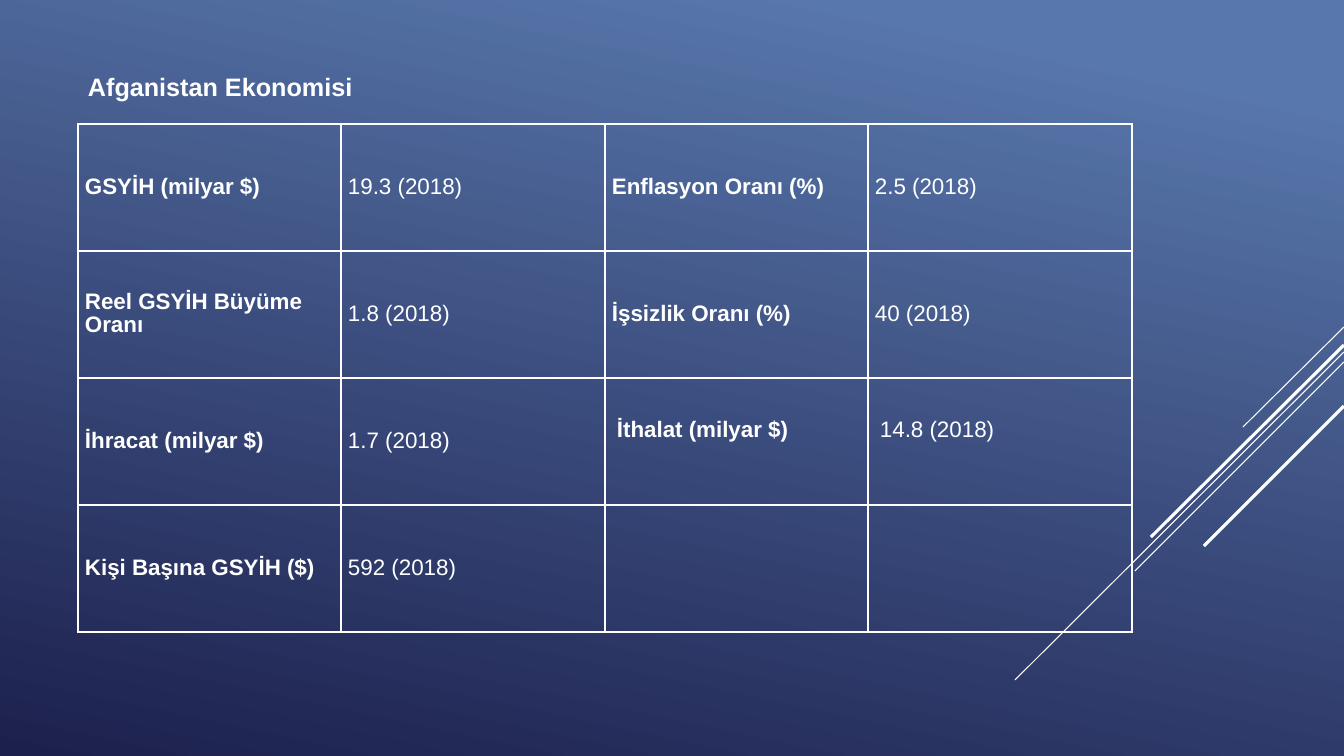
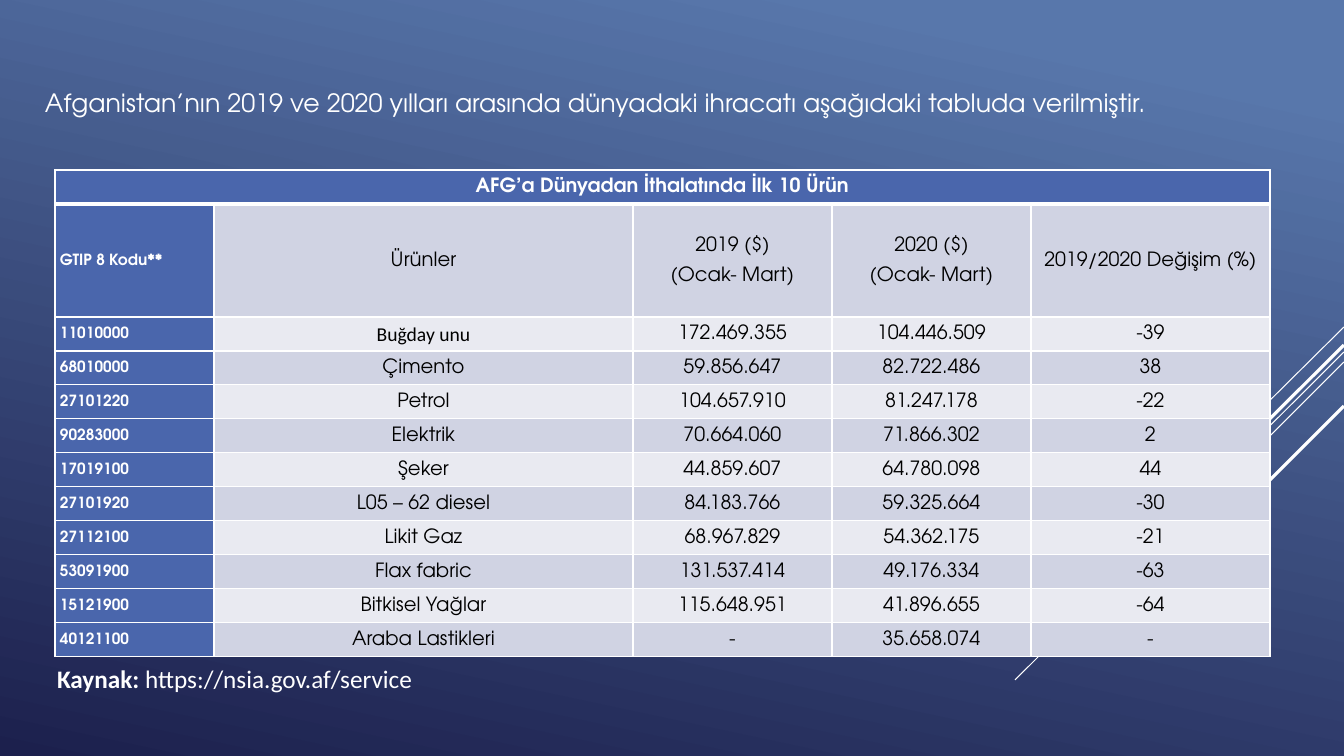
from dataclasses import dataclass

from lxml import etree
from pptx import Presentation
from pptx.dml.color import RGBColor
from pptx.enum.shapes import MSO_CONNECTOR
from pptx.enum.text import MSO_ANCHOR, MSO_AUTO_SIZE, PP_ALIGN
from pptx.oxml.ns import qn
from pptx.slide import Slide
from pptx.table import Table, _Cell
from pptx.text.text import TextFrame, _Paragraph
from pptx.util import Emu, Length, Pt

STRAIGHT = MSO_CONNECTOR.STRAIGHT
MIDDLE = MSO_ANCHOR.MIDDLE
GROW = MSO_AUTO_SIZE.SHAPE_TO_FIT_TEXT
LEFT, CENTER = PP_ALIGN.LEFT, PP_ALIGN.CENTER

EMU_PER_PX = 914400 / 100.8
PAGE_WIDTH, PAGE_HEIGHT = 1344, 756
COLORS = {
    "sky": "5877AB",
    "night": "1C204D",
    "white": "FFFFFF",
    "black": "000000",
    "header": "4A66AC",
    "band_dark": "D0D3E3",
    "band_light": "E9EAF1",
}
SANS, HUMANIST, GEOMETRIC = "Arial", "Calibri", "TeX Gyre Adventor"
EXACT_LINE = Pt(16.5)
TABLE_LINE = 1.07
BORDER_SIDES = ("L", "R", "T", "B")


@dataclass(frozen=True)
class Ray:
    top: int
    end_x: int
    end_y: int
    weight: float


@dataclass(frozen=True)
class Indicator:
    label: str
    value: str
    left_inset: int = 7
    bottom_inset: int = 0
    spacing: Length | float = EXACT_LINE


@dataclass(frozen=True)
class Product:
    code: str
    name: str
    first_year: str
    second_year: str
    change: str
    name_font: str = GEOMETRIC


RAYS = (
    Ray(327, 1243, 427, 0.75),
    Ray(352, 1015, 680, 0.75),
    Ray(362, 1135, 571, 0.75),
    Ray(345, 1151, 537, 2.25),
    Ray(406, 1204, 546, 2.25),
)
INDICATORS = (
    (Indicator("GSYİH (milyar $)", "19.3 (2018)"), Indicator("Enflasyon Oranı (%)", "2.5 (2018)")),
    (Indicator("Reel GSYİH Büyüme Oranı", "1.8 (2018)"), Indicator("İşsizlik Oranı (%)", "40 (2018)")),
    (
        Indicator("İhracat (milyar $)", "1.7 (2018)"),
        Indicator("İthalat (milyar $)", "14.8 (2018)", 12, 26, TABLE_LINE),
    ),
    (Indicator("Kişi Başına GSYİH ($)", "592 (2018)"), Indicator("", "")),
)
PRODUCT_HEADINGS = (
    ("Ürünler",),
    ("2019 ($)", "(Ocak- Mart)"),
    ("2020 ($)", "(Ocak- Mart)"),
    ("2019/2020 Değişim (%)",),
)
PRODUCTS = (
    Product("11010000", "Buğday unu", "172.469.355", "104.446.509", "-39", HUMANIST),
    Product("68010000", "Çimento", "59.856.647", "82.722.486", "38"),
    Product("27101220", "Petrol", "104.657.910", "81.247.178", "-22"),
    Product("90283000", "Elektrik", "70.664.060", "71.866.302", "2"),
    Product("17019100", "Şeker", "44.859.607", "64.780.098", "44"),
    Product("27101920", "L05 – 62 diesel", "84.183.766", "59.325.664", "-30"),
    Product("27112100", "Likit Gaz", "68.967.829", "54.362.175", "-21"),
    Product("53091900", "Flax fabric", "131.537.414", "49.176.334", "-63"),
    Product("15121900", "Bitkisel Yağlar", "115.648.951", "41.896.655", "-64"),
    Product("40121100", "Araba Lastikleri", "-", "35.658.074", "-"),
)


def px(length: int) -> Emu:
    return Emu(round(length * EMU_PER_PX))


def rgb(name: str) -> RGBColor:
    return RGBColor.from_string(COLORS[name])


def write(
    para: _Paragraph,
    text: str,
    *,
    size: int = 18,
    font: str = SANS,
    color: str = "white",
    bold: bool = False,
    align: PP_ALIGN = LEFT,
    spacing: Length | float = 1.0,
    after: float = 0,
) -> None:
    para.alignment = align
    para.line_spacing = spacing
    para.space_before = Pt(0)
    para.space_after = Pt(after)
    span = para.add_run()
    span.text = text
    span.font.size = Pt(size)
    span.font.name = font
    span.font.bold = bold
    span.font.color.rgb = rgb(color)


def add_text_box(
    page: Slide, left: int, top: int, width: int, height: int, left_inset: int = 10
) -> TextFrame:
    box = page.shapes.add_textbox(px(left), px(top), px(width), px(height))
    frame = box.text_frame
    frame.word_wrap = True
    frame.auto_size = GROW
    frame.margin_left = px(left_inset)
    return frame


def set_borders(cell: _Cell, top: int = 1, bottom: int = 1) -> None:
    properties = cell._tc.get_or_add_tcPr()
    for side, weight in zip(BORDER_SIDES, (1, 1, top, bottom)):
        line = etree.SubElement(properties, qn(f"a:ln{side}"), w=str(Pt(weight)))
        fill = etree.SubElement(line, qn("a:solidFill"))
        etree.SubElement(fill, qn("a:srgbClr"), val=COLORS["white"])


def style_cell(
    cell: _Cell, inset: int, fill: str | None = None, top: int = 1, bottom: int = 1
) -> None:
    set_borders(cell, top, bottom)
    if fill is None:
        cell.fill.background()
    else:
        cell.fill.solid()
        cell.fill.fore_color.rgb = rgb(fill)
    cell.vertical_anchor = MIDDLE
    cell.margin_left = cell.margin_right = px(inset)
    cell.margin_top = cell.margin_bottom = px(0)


def add_grid(page: Slide, left: int, top: int, widths: list[int], heights: list[int]) -> Table:
    frame = page.shapes.add_table(
        len(heights), len(widths), px(left), px(top), px(sum(widths)), px(sum(heights))
    )
    table = frame.table
    table.first_row = table.horz_banding = False
    for column, width in zip(table.columns, widths):
        column.width = px(width)
    for row, height in zip(table.rows, heights):
        row.height = px(height)
    return table


def set_background(deck: Presentation) -> None:
    fill = deck.slide_master.background.fill
    fill.gradient()
    fill.gradient_angle = 258
    for stop, color, position in zip(fill.gradient_stops, ("sky", "night"), (0.1, 1.0)):
        stop.color.rgb = rgb(color)
        stop.position = position


def add_page(deck: Presentation) -> Slide:
    page = deck.slides.add_slide(deck.slide_layouts[6])
    for ray in RAYS:
        line = page.shapes.add_connector(
            STRAIGHT, px(PAGE_WIDTH), px(ray.top), px(ray.end_x), px(ray.end_y)
        )
        line.line.color.rgb = rgb("white")
        line.line.width = Pt(ray.weight)
        etree.SubElement(line.element.spPr, qn("a:effectLst"))
    return page


def add_economy_page(deck: Presentation) -> None:
    page = add_page(deck)
    table = add_grid(page, 78, 124, [263, 264] * 2, [127] * len(INDICATORS))
    for row, pair in enumerate(INDICATORS):
        for group, item in enumerate(pair):
            for offset, text in enumerate((item.label, item.value)):
                cell = table.cell(row, 2 * group + offset)
                style_cell(cell, 7)
                cell.margin_left = px(item.left_inset)
                cell.margin_bottom = px(item.bottom_inset)
                if text:
                    para = cell.text_frame.paragraphs[0]
                    write(para, text, size=16, bold=offset == 0, spacing=item.spacing)
    title = add_text_box(page, 78, 74, 674, 35)
    write(title.paragraphs[0], "Afganistan Ekonomisi", bold=True, spacing=EXACT_LINE)


def fill_product_cell(
    cell: _Cell,
    lines: tuple[str, ...],
    fill: str,
    *,
    top: int = 1,
    bottom: int = 1,
    size: int = 14,
    font: str = GEOMETRIC,
    color: str = "black",
    bold: bool = False,
    align: PP_ALIGN = CENTER,
) -> None:
    style_cell(cell, 5, fill, top, bottom)
    frame = cell.text_frame
    for index, text in enumerate(lines):
        para = frame.add_paragraph() if index else frame.paragraphs[0]
        write(para, text, size=size, font=font, color=color, bold=bold,
              align=align, spacing=TABLE_LINE, after=8)


def add_imports_page(deck: Presentation) -> None:
    page = add_page(deck)
    widths = [159, 419, 199, 199, 239]
    table = add_grid(page, 55, 170, widths, [34, 113] + [34] * len(PRODUCTS))
    code_format = {"size": 11, "color": "white", "bold": True, "align": LEFT}

    table.cell(0, 0).merge(table.cell(0, len(widths) - 1))
    fill_product_cell(table.cell(0, 0), ("AFG’a Dünyadan İthalatında İlk 10 Ürün",),
                      "header", bottom=3, color="white", bold=True)
    for column in range(1, len(widths)):
        style_cell(table.cell(0, column), 5, "header", bottom=3)

    fill_product_cell(table.cell(1, 0), ("GTIP 8 Kodu**",), "header", top=3, **code_format)
    for column, lines in enumerate(PRODUCT_HEADINGS, 1):
        fill_product_cell(table.cell(1, column), lines, "band_dark", top=3)

    for row, product in enumerate(PRODUCTS, 2):
        band = "band_dark" if row % 2 else "band_light"
        fill_product_cell(table.cell(row, 0), (product.code,), "header", **code_format)
        fill_product_cell(table.cell(row, 1), (product.name,), band, font=product.name_font)
        figures = (product.first_year, product.second_year, product.change)
        for column, figure in enumerate(figures, 2):
            fill_product_cell(table.cell(row, column), (figure,), band)

    source = add_text_box(page, 43, 671, 673, 28, left_inset=14).paragraphs[0]
    write(source, "Kaynak: ", font=HUMANIST, bold=True, spacing=0.5)
    write(source, "https://nsia.gov.af/service", font=HUMANIST, spacing=0.5)
    intro = add_text_box(page, 35, 82, 1215, 40)
    write(
        intro.paragraphs[0],
        "Afganistan’nın 2019 ve 2020 yılları arasında dünyadaki ihracatı aşağıdaki tabluda verilmiştir.",
        font=GEOMETRIC,
    )


def main() -> None:
    deck = Presentation()
    deck.slide_width, deck.slide_height = px(PAGE_WIDTH), px(PAGE_HEIGHT)
    set_background(deck)
    add_economy_page(deck)
    add_imports_page(deck)
    deck.save("out.pptx")


if __name__ == "__main__":
    main()
